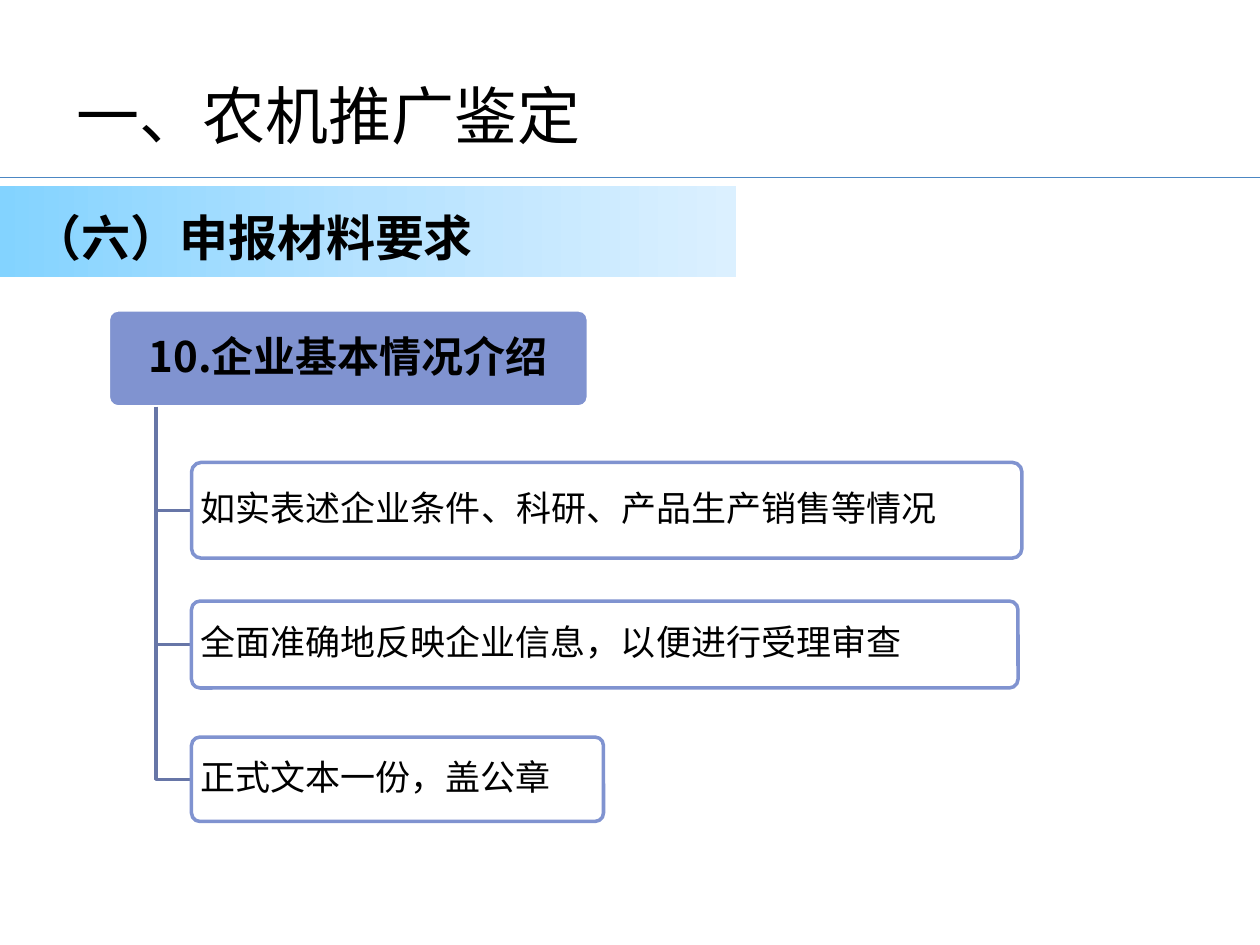
from copy import deepcopy

from lxml import etree
from pptx import Presentation
from pptx.dml.color import RGBColor
from pptx.enum import shapes, text
from pptx.oxml import ns
from pptx.util import Inches, Pt

FONT = "Noto Sans CJK SC"
TITLE = "一、农机推广鉴定"
SECTION = "（六）申报材料要求"
TOPIC = "10.企业基本情况介绍"
# text, top, width, height
DETAILS = [
    ("如实表述企业条件、科研、产品生产销售等情况", 3.67, 6.59, 0.76),
    ("全面准确地反映企业信息，以便进行受理审查", 4.77, 6.56, 0.69),
    ("正式文本一份，盖公章", 5.85, 3.27, 0.67),
]
BAND_STOPS = [(0, "83D3FF"), (0.5, "B5E2FF"), (1, "DBF0FF")]
TRUNK_X, DETAIL_X, TRUNK_TOP = 1.24, 1.52, 3.23
PERIWINKLE, SLATE, WHITE = "8093D0", "6776A7", "FFFFFF"


def rgb(value):
    return RGBColor.from_string(value)


def set_line(shape, color, width):
    shape.line.color.rgb = rgb(color)
    shape.line.width = Pt(width)


def write(shape, words, size, bold=False, align=text.PP_ALIGN.LEFT,
          anchor=text.MSO_ANCHOR.MIDDLE, inset=(0.1, 0.05), spacing=1):
    tf = shape.text_frame
    side, end = (Inches(v) for v in inset)
    frame = dict(word_wrap=True, vertical_anchor=anchor, margin_left=side,
                 margin_right=side, margin_top=end, margin_bottom=end,
                 auto_size=text.MSO_AUTO_SIZE.NONE)
    for name, value in frame.items():
        setattr(tf, name, value)
    p = tf.paragraphs[0]
    p.alignment, p.line_spacing = align, spacing
    r = p.add_run()
    r.text = words
    for name, value in dict(size=Pt(size), bold=bold, name=FONT).items():
        setattr(r.font, name, value)
    r.font.color.rgb = rgb("000000")
    ea = etree.SubElement(r.font._element, ns.qn("a:ea"))
    ea.set("typeface", FONT)


def add_box(s, kind, left, top, width, height):
    sp = s.shapes.add_shape(kind, *map(Inches, (left, top, width, height)))
    sp.shadow.inherit = False
    return sp


def add_card(s, left, top, width, height, fill, line):
    card = add_box(s, shapes.MSO_SHAPE.ROUNDED_RECTANGLE, left, top, width, height)
    card.adjustments[0] = 0.1
    card.fill.solid()
    card.fill.fore_color.rgb = rgb(fill)
    set_line(card, line, 2)
    return card


def add_band(s):
    band = add_box(s, shapes.MSO_SHAPE.RECTANGLE, 0, 1.48, 5.84, 0.72)
    band.line.fill.background()
    band.fill.gradient()
    band.fill.gradient_angle = 0
    stop_list = band._element.spPr.find(".//" + ns.qn("a:gsLst"))
    stop_list.insert(1, deepcopy(stop_list[0]))
    for stop, (position, color) in zip(band.fill.gradient_stops, BAND_STOPS):
        stop.position = position
        stop.color.rgb = rgb(color)


def add_branch(s, end_y):
    """Draw an elbow from the topic card down to a detail card."""
    builder = s.shapes.build_freeform(Inches(TRUNK_X), Inches(TRUNK_TOP))
    corners = [(TRUNK_X, end_y), (DETAIL_X, end_y)]
    builder.add_line_segments(
        [(Inches(x), Inches(y)) for x, y in corners], close=False)
    branch = builder.convert_to_shape()
    branch.shadow.inherit = False
    branch.fill.background()
    set_line(branch, SLATE, 2)


def main():
    prs = Presentation()
    prs.slide_width, prs.slide_height = Inches(10), Inches(7.5)
    s = prs.slides.add_slide(prs.slide_layouts[5])

    title = s.shapes.title
    title.left, title.top = Inches(0.51), Inches(0.47)
    title.width, title.height = Inches(8.4), Inches(0.88)
    write(title, TITLE, 36)

    rule = s.shapes.add_connector(
        shapes.MSO_CONNECTOR.STRAIGHT, 0, Inches(1.41), Inches(10), Inches(1.41))
    set_line(rule, "4C87C3", 0.75)
    etree.SubElement(rule._element.spPr, ns.qn("a:effectLst"))

    add_band(s)
    section = s.shapes.add_textbox(*map(Inches, (0.16, 1.6, 5.31, 0.57)))
    write(section, SECTION, 28, bold=True, anchor=text.MSO_ANCHOR.TOP)

    topic = add_card(s, 0.86, 2.46, 3.81, 0.77, PERIWINKLE, WHITE)
    write(topic, TOPIC, 24, bold=True, align=text.PP_ALIGN.CENTER,
          inset=(0.05, 0.03), spacing=0.9)

    for words, top, width, height in DETAILS:
        add_branch(s, top + height / 2)
        card = add_card(s, DETAIL_X, top, width, height, WHITE, PERIWINKLE)
        write(card, words, 20, inset=(0.05, 0.03), spacing=0.9)

    prs.save("out.pptx")


if __name__ == "__main__":
    main()
